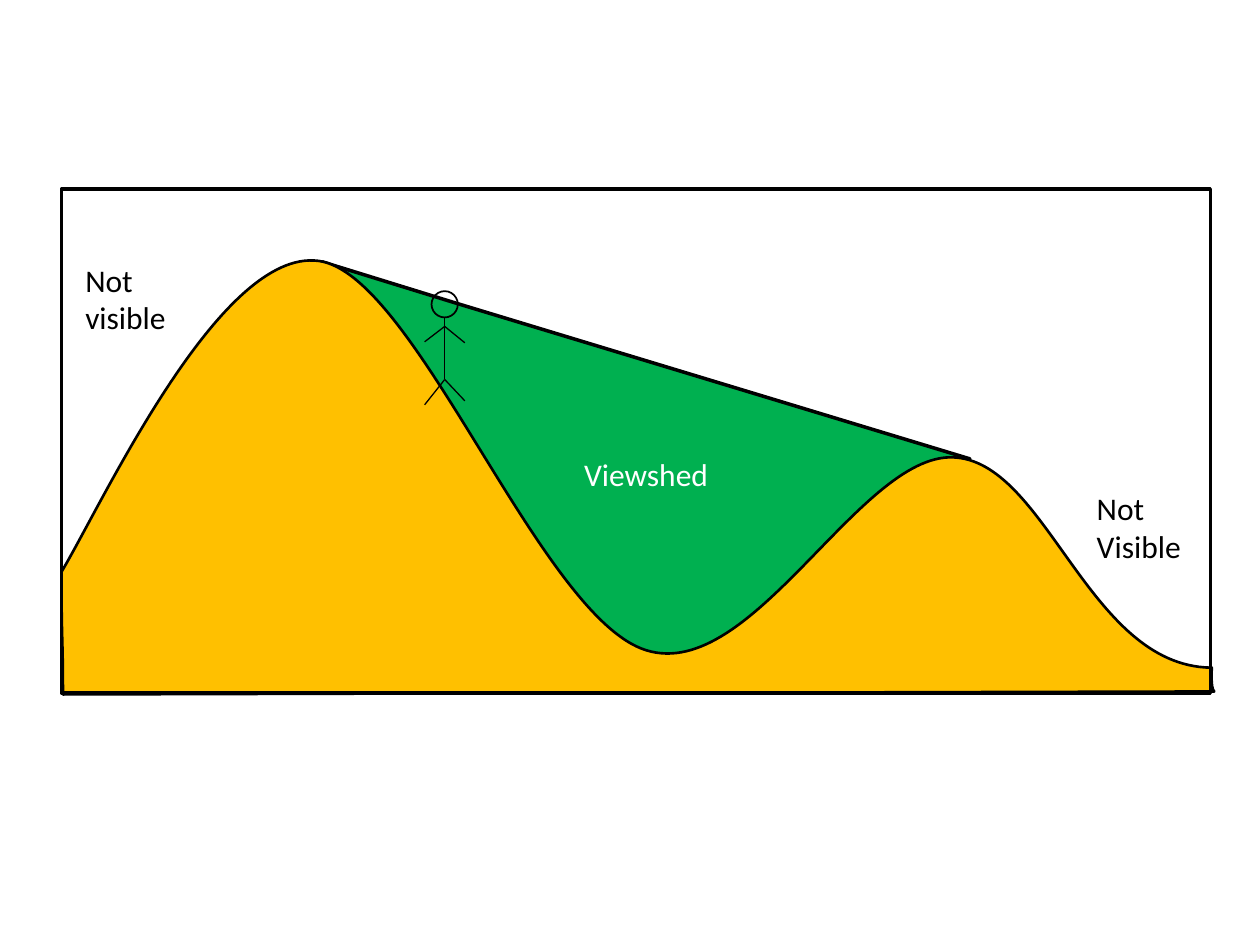
from lxml.etree import SubElement
from pptx import Presentation
from pptx.dml.color import RGBColor
from pptx.enum.shapes import MSO_CONNECTOR, MSO_SHAPE
from pptx.enum.text import MSO_ANCHOR, MSO_AUTO_SIZE, PP_ALIGN
from pptx.oxml.ns import qn
from pptx.util import Cm, Pt

BLACK = RGBColor(0x00, 0x00, 0x00)
WHITE = RGBColor(0xFF, 0xFF, 0xFF)
GREEN = RGBColor(0x00, 0xB0, 0x50)
AMBER = RGBColor(0xFF, 0xC0, 0x00)

FONT = {"name": "Calibri", "size": Pt(18)}
LABEL_FRAME = {"word_wrap": False, "auto_size": MSO_AUTO_SIZE.SHAPE_TO_FIT_TEXT}

VIEWSHED_START = (7.98, 2.31)
VIEWSHED_SEGMENTS = [
    [(18.31, 5.44)],
    [(13.82, 9.86)],
    [(13.11, 9.73), (12.22, 10.03), (11.53, 10.03)],
    [(7.77, 5.18)],
    [(7.77, 3.91), (5.26, 1.47), (5.26, 1.47)],
]
TERRAIN_START = (23.19, 9.65)
TERRAIN_SEGMENTS = [
    [(23.19, 9.65), (23.16, 10.08), (23.24, 10.13)],
    [(0.03, 10.19)],
    [(0.03, 8.99), (0, 9.17), (0, 7.72)],
    [(0.86, 6.27), (3.2, 1.19), (5.18, 1.45)],
    [(7.14, 1.7), (9.65, 8.64), (11.79, 9.3)],
    [(13.92, 9.96), (16.08, 5.36), (17.96, 5.41)],
    [(19.86, 5.46), (20.68, 9.6), (23.16, 9.65)],
]


def apply_format(target, values):
    for name, value in values.items():
        setattr(target, name, value)


def style_line(shape, width):
    shape.line.color.rgb = BLACK
    shape.line.width = Pt(width)


def style_shape(shape, width, fill=None):
    shape.shadow.inherit = False
    style_line(shape, width)
    if fill is None:
        shape.fill.background()
    else:
        shape.fill.solid()
        shape.fill.fore_color.rgb = fill


def style_text(frame, color):
    for paragraph in frame.paragraphs:
        apply_format(paragraph.font, FONT)
        paragraph.font.color.rgb = color


def add_curved_shape(shapes, left, top, start, segments, fill, width):
    def place(point):
        return Cm(left + point[0]), Cm(top + point[1])

    builder = shapes.build_freeform(*place(start))
    builder.add_line_segments([place(point) for segment in segments for point in segment])
    shape = builder.convert_to_shape()
    lines = iter(list(shape.element.iter(qn("a:lnTo"))))
    for segment in segments:
        group = [next(lines) for _ in segment]
        if len(segment) == 3:
            curve = SubElement(group[0].getparent(), qn("a:cubicBezTo"))
            group[0].addprevious(curve)
            for line in group:
                curve.append(line[0])
                line.getparent().remove(line)
    style_shape(shape, width, fill)
    return shape


def add_viewshed(shapes, left, top):
    shape = add_curved_shape(
        shapes, left, top, VIEWSHED_START, VIEWSHED_SEGMENTS, GREEN, 2
    )
    frame = shape.text_frame
    frame.text = "Viewshed"
    frame.vertical_anchor = MSO_ANCHOR.MIDDLE
    frame.paragraphs[0].alignment = PP_ALIGN.CENTER
    style_text(frame, WHITE)


def add_observer(shapes, left, top, width, height):
    figure = shapes.add_group_shape().shapes
    center, diameter = width / 2, 0.53
    head = figure.add_shape(
        MSO_SHAPE.OVAL,
        Cm(left + center - diameter / 2),
        Cm(top),
        Cm(diameter),
        Cm(diameter),
    )
    style_shape(head, 1)
    neck, shoulder, hip = (center, diameter), (center, 0.71), (center, 1.78)
    limbs = [
        (neck, hip),
        (hip, (width, 2.21)),
        (shoulder, (width, 1.04)),
        (shoulder, (0, 1.02)),
        (hip, (0, height)),
    ]
    for (begin_x, begin_y), (end_x, end_y) in limbs:
        limb = figure.add_connector(
            MSO_CONNECTOR.STRAIGHT,
            Cm(left + begin_x),
            Cm(top + begin_y),
            Cm(left + end_x),
            Cm(top + end_y),
        )
        style_line(limb, 0.75)
        SubElement(limb.element.spPr, qn("a:effectLst"))


def add_label(shapes, text, left, top, width, height):
    box = shapes.add_textbox(Cm(left), Cm(top), Cm(width), Cm(height))
    box.text_frame.text = text
    apply_format(box.text_frame, LABEL_FRAME)
    style_text(box.text_frame, BLACK)


def add_scene(shapes, left, top, width, height):
    add_viewshed(shapes, left, top)
    add_curved_shape(shapes, left, top, TERRAIN_START, TERRAIN_SEGMENTS, AMBER, 1.5)
    add_observer(shapes, left + 7.32, top + 2.06, 0.81, 2.29)
    border = shapes.add_shape(
        MSO_SHAPE.RECTANGLE, Cm(left), Cm(top), Cm(width), Cm(height)
    )
    style_shape(border, 2)
    add_label(shapes, "Not\nVisible", left + 20.62, top + 5.92, 2.24, 1.8)
    add_label(shapes, "Not\nvisible", left + 0.23, top + 1.32, 2.16, 1.8)


def main():
    presentation = Presentation()
    apply_format(presentation, {"slide_width": Cm(25.4), "slide_height": Cm(19.05)})
    slide = presentation.slides.add_slide(presentation.slide_layouts[6])
    add_scene(slide.shapes, 1.24, 3.81, 23.16, 10.16)
    presentation.save("out.pptx")


if __name__ == "__main__":
    main()
